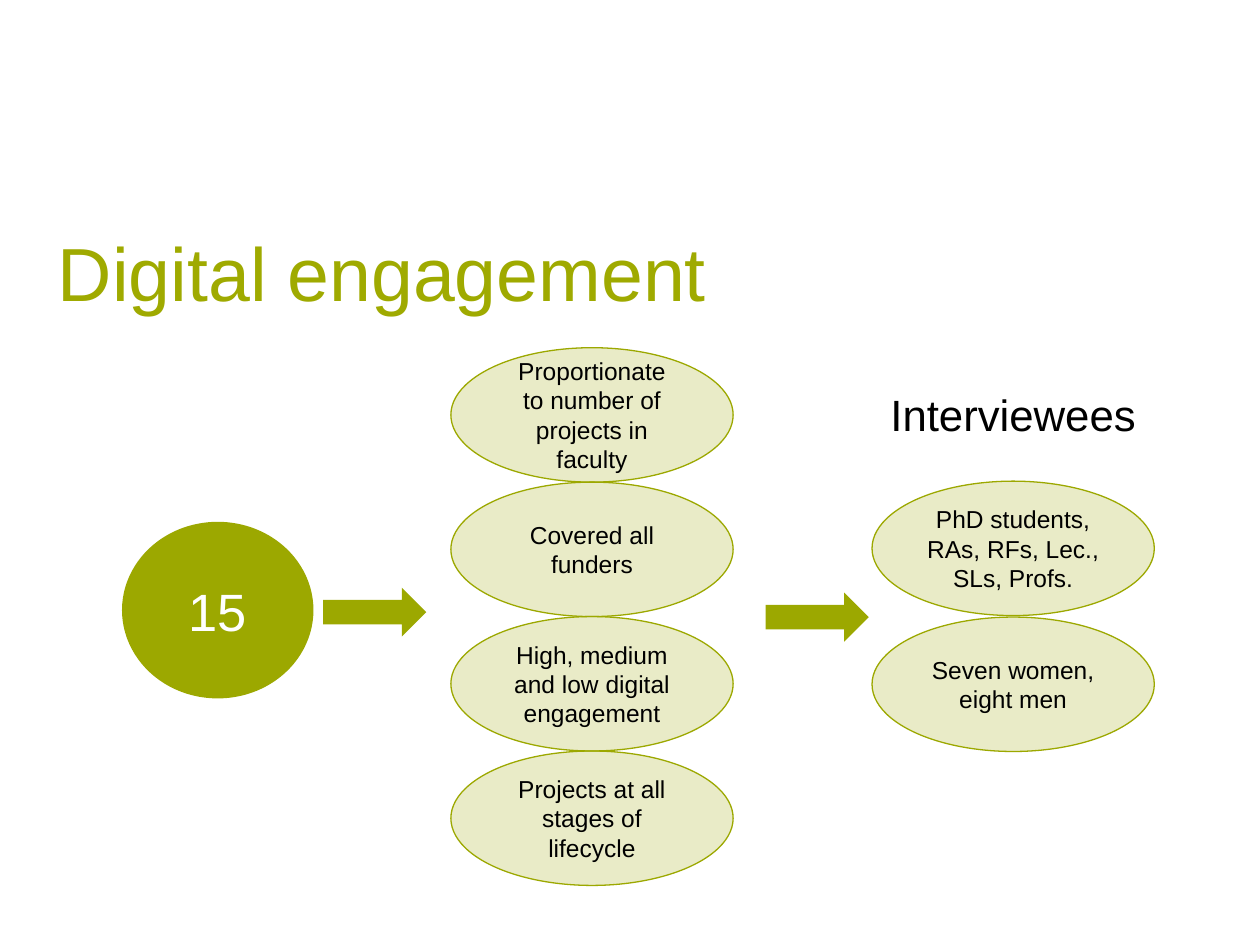
from dataclasses import dataclass

from lxml import etree
from pptx import Presentation
from pptx.dml.color import RGBColor
from pptx.enum.shapes import MSO_SHAPE
from pptx.enum.text import MSO_ANCHOR, PP_ALIGN
from pptx.oxml.ns import qn
from pptx.util import Cm, Pt

OVAL, DOWN_ARROW = MSO_SHAPE.OVAL, MSO_SHAPE.DOWN_ARROW
TOP, MIDDLE = MSO_ANCHOR.TOP, MSO_ANCHOR.MIDDLE
LEFT, CENTER = PP_ALIGN.LEFT, PP_ALIGN.CENTER


@dataclass(frozen=True)
class Theme:
    font: str = "Arial"
    title_color: RGBColor = RGBColor(0x9F, 0xAA, 0x00)
    olive: RGBColor = RGBColor(0x9C, 0xA8, 0x00)
    black: RGBColor = RGBColor(0, 0, 0)
    white: RGBColor = RGBColor(255, 255, 255)
    tint_percent: int = 22
    outline: float = 0.75
    title_size: int = 43
    heading_size: int = 25
    count_size: int = 30
    label_size: int = 14


@dataclass(frozen=True)
class Box:
    left: float
    top: float
    width: float
    height: float

    def lengths(self) -> tuple:
        return Cm(self.left), Cm(self.top), Cm(self.width), Cm(self.height)


@dataclass(frozen=True)
class OvalStack:
    left: float
    top: float
    pitch: float
    labels: tuple[str, ...]


THEME = Theme()
OVAL_WIDTH, OVAL_HEIGHT = 5.69, 2.71
HEADING_FRAME = {
    "margin_left": Cm(0.2), "margin_right": Cm(0.2),
    "margin_top": Cm(0.1), "margin_bottom": Cm(0.1),
}
STACKS = (
    OvalStack(9.09, 7.01, 2.71, (
        "Proportionate to number of projects in faculty",
        "Covered all funders",
        "High, medium and low digital engagement",
        "Projects at all stages of lifecycle",
    )),
    OvalStack(17.58, 9.7, 2.74, (
        "PhD students, RAs, RFs, Lec., SLs, Profs.",
        "Seven women, eight men",
    )),
)
ARROWS = (Box(7.06, 11.3, 0.99, 2.08), Box(15.98, 11.4, 0.99, 2.08))


def apply(target, formats: dict) -> None:
    for attribute, value in formats.items():
        setattr(target, attribute, value)


def write(shape, text: str, size: int, color: RGBColor, align=CENTER, anchor=MIDDLE) -> None:
    frame = shape.text_frame
    apply(frame, {"word_wrap": True, "vertical_anchor": anchor})
    paragraph = frame.paragraphs[0]
    paragraph.alignment = align
    run = paragraph.add_run()
    run.text = text
    apply(run.font, {"name": THEME.font, "size": Pt(size)})
    run.font.color.rgb = color


def add_heading(slide, box: Box, text: str, size: int, color: RGBColor, anchor) -> None:
    heading = slide.shapes.add_textbox(*box.lengths())
    apply(heading.text_frame, HEADING_FRAME)
    write(heading, text, size, color, LEFT, anchor)


def add_olive_shape(slide, kind, box: Box):
    shape = slide.shapes.add_shape(kind, *box.lengths())
    shape.shadow.inherit = False
    shape.fill.solid()
    shape.fill.fore_color.rgb = THEME.olive
    shape.line.fill.background()
    return shape


def add_tinted_oval(slide, box: Box, label: str) -> None:
    oval = add_olive_shape(slide, OVAL, box)
    fill_color = oval.fill._xPr.find(qn("a:solidFill"))[0]
    etree.SubElement(fill_color, qn("a:alpha"), val=str(THEME.tint_percent * 1000))
    oval.line.color.rgb = THEME.olive
    oval.line.width = Pt(THEME.outline)
    write(oval, label, THEME.label_size, THEME.black)


def add_stack(slide, stack: OvalStack) -> None:
    for row, label in enumerate(stack.labels):
        box = Box(stack.left, stack.top + row * stack.pitch, OVAL_WIDTH, OVAL_HEIGHT)
        add_tinted_oval(slide, box, label)


def main() -> None:
    presentation = Presentation()
    apply(presentation, {"slide_width": Cm(25.4), "slide_height": Cm(19.05)})
    slide = presentation.slides.add_slide(presentation.slide_layouts[6])

    add_heading(slide, Box(0.97, 4.45, 22.86, 2.03), "Digital engagement",
                THEME.title_size, THEME.title_color, MIDDLE)
    add_heading(slide, Box(17.75, 7.72, 5.51, 1.27), "Interviewees",
                THEME.heading_size, THEME.black, TOP)

    interview_count = add_olive_shape(slide, OVAL, Box(2.46, 10.52, 3.86, 3.56))
    write(interview_count, "15", THEME.count_size, THEME.white)

    for stack in STACKS:
        add_stack(slide, stack)
    for box in ARROWS:
        add_olive_shape(slide, DOWN_ARROW, box).rotation = 270

    presentation.save("out.pptx")


if __name__ == "__main__":
    main()
